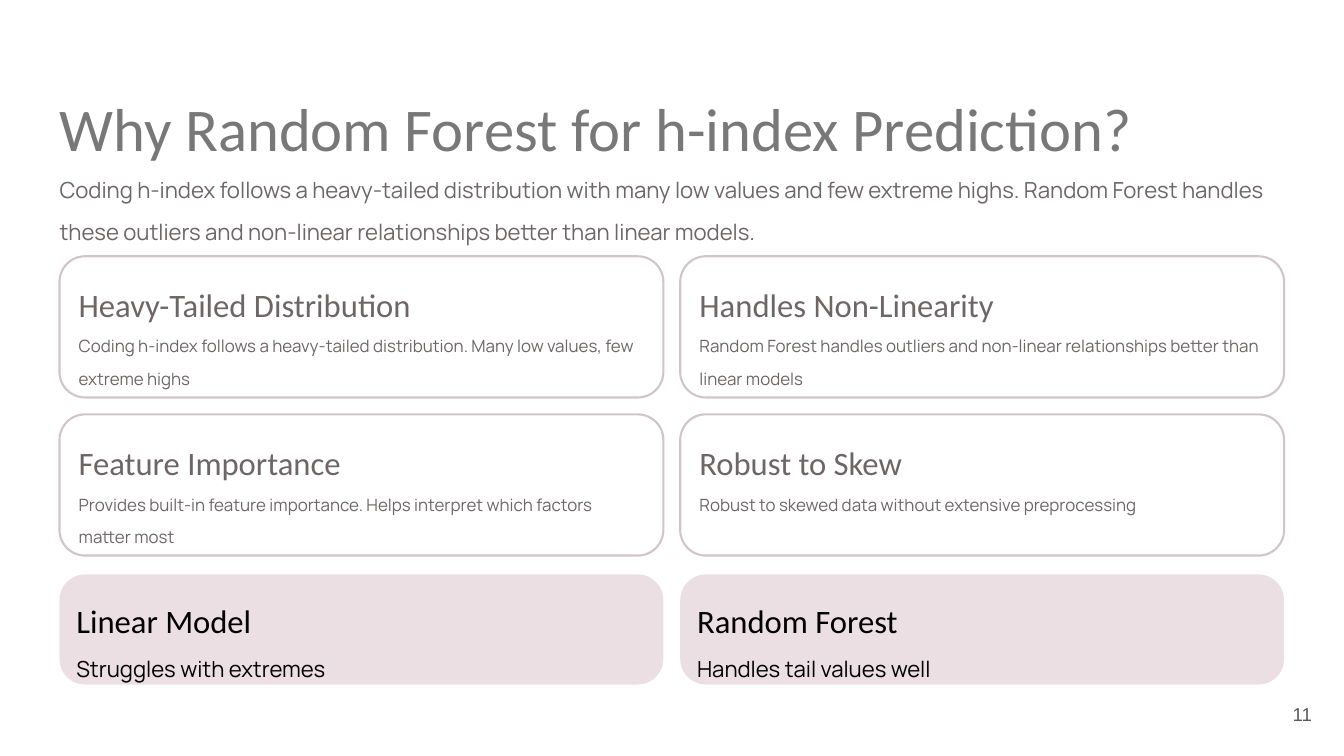
from pptx import Presentation
from pptx.dml.color import RGBColor
from pptx.enum.shapes import MSO_SHAPE
from pptx.enum.text import MSO_ANCHOR, MSO_AUTO_SIZE, PP_ALIGN
from pptx.oxml.ns import qn
from pptx.util import Cm, Pt

ROUND = MSO_SHAPE.ROUNDED_RECTANGLE
TOP, MIDDLE = MSO_ANCHOR.TOP, MSO_ANCHOR.MIDDLE
LEFT, RIGHT = PP_ALIGN.LEFT, PP_ALIGN.RIGHT
FIXED = MSO_AUTO_SIZE.NONE
GREY, BLACK = "6E6666", "000000"


def color(code):
    return RGBColor.from_string(code)


def write(box, place, text, font, size, tint, lines=1.0,
          align=LEFT, anchor=TOP, inset=0):
    """Place a text shape and fill it with one formatted paragraph."""
    for name, value in zip(("left", "top", "width", "height"), place):
        setattr(box, name, Cm(value))
    frame = box.text_frame
    frame.text = text
    para = frame.paragraphs[0]
    margins = {f"margin_{side}": Cm(inset)
               for side in ("left", "top", "right", "bottom")}
    formats = (
        (frame, {"word_wrap": True, "auto_size": FIXED,
                 "vertical_anchor": anchor, **margins}),
        (para, {"line_spacing": lines, "space_before": Pt(0),
                "alignment": align}),
        (para.font, {"name": font, "size": Pt(size)}),
    )
    for item, values in formats:
        for name, value in values.items():
            setattr(item, name, value)
    para.font.color.rgb = color(tint)
    return para


deck = Presentation()
deck.slide_width, deck.slide_height = Cm(40.64), Cm(22.86)
slide = deck.slides.add_slide(deck.slide_layouts[1])
shapes = slide.shapes

# Title and introduction
write(shapes.title, (1.8, 2.16, 36.17, 2.31),
      "Why Random Forest for h-index Prediction?",
      "Calibri", 52, "787878", 1.26)
intro = write(
    slide.placeholders[1], (1.8, 4.85, 37.03, 2.16),
    "Coding h-index follows a heavy-tailed distribution with many low values "
    "and few extreme highs. Random Forest handles these outliers and "
    "non-linear relationships better than linear models.",
    "Manrope", 19, GREY, 1.59)
props = intro._p.get_or_add_pPr()
props.set("marL", "0")
props.set("indent", "0")
bullet = props.makeelement(qn("a:buNone"), {})
props.insert_element_before(bullet, "a:tabLst", "a:defRPr", "a:extLst")

# Cards: two columns, two outlined rows and one filled row
WIDTH, STEP = 18.26, 18.77
REASON = {"high": 4.27, "adj": 0.181, "fill": "FFFFFF", "line": "D2C5C9",
          "pad": 0.58, "size": 14.5, "tint": GREY}
MODEL = {"high": 3.33, "adj": 0.233, "fill": "ECDFE3", "line": None,
         "pad": 0.51, "size": 19, "tint": BLACK}
ROWS = (
    (7.75, REASON, (
        ("Heavy-Tailed Distribution",
         "Coding h-index follows a heavy-tailed distribution. "
         "Many low values, few extreme highs"),
        ("Handles Non-Linearity",
         "Random Forest handles outliers and non-linear relationships "
         "better than linear models"))),
    (12.53, REASON, (
        ("Feature Importance",
         "Provides built-in feature importance. "
         "Helps interpret which factors matter most"),
        ("Robust to Skew",
         "Robust to skewed data without extensive preprocessing"))),
    (17.37, MODEL, (
        ("Linear Model", "Struggles with extremes"),
        ("Random Forest", "Handles tail values well"))),
)
for top, style, cards in ROWS:
    pad, tint = style["pad"], style["tint"]
    for col, (head, body) in enumerate(cards):
        left = 1.8 + col * STEP
        card = shapes.add_shape(ROUND, Cm(left), Cm(top),
                                Cm(WIDTH), Cm(style["high"]))
        card.shadow.inherit = False
        card.adjustments[0] = style["adj"]
        card.fill.solid()
        card.fill.fore_color.rgb = color(style["fill"])
        if style["line"]:
            card.line.color.rgb = color(style["line"])
            card.line.width = Pt(1.8)
        else:
            card.line.fill.background()
        wide = WIDTH - 2 * pad
        texts = ((head, 0, 1.17, "Calibri", 28, 1.25),
                 (body, 1.47, 1.65, "Manrope", style["size"], 1.59))
        for text, drop, high, font, size, lines in texts:
            box = shapes.add_textbox(0, 0, 0, 0)
            write(box, (left + pad, top + pad + drop, wide, high),
                  text, font, size, tint, lines)

# Page number
write(shapes.add_textbox(0, 0, 0, 0), (37.64, 20.73, 2.44, 1.75), "11",
      "Arial", 16, "595959", align=RIGHT, anchor=MIDDLE, inset=0.41)

deck.save("out.pptx")
